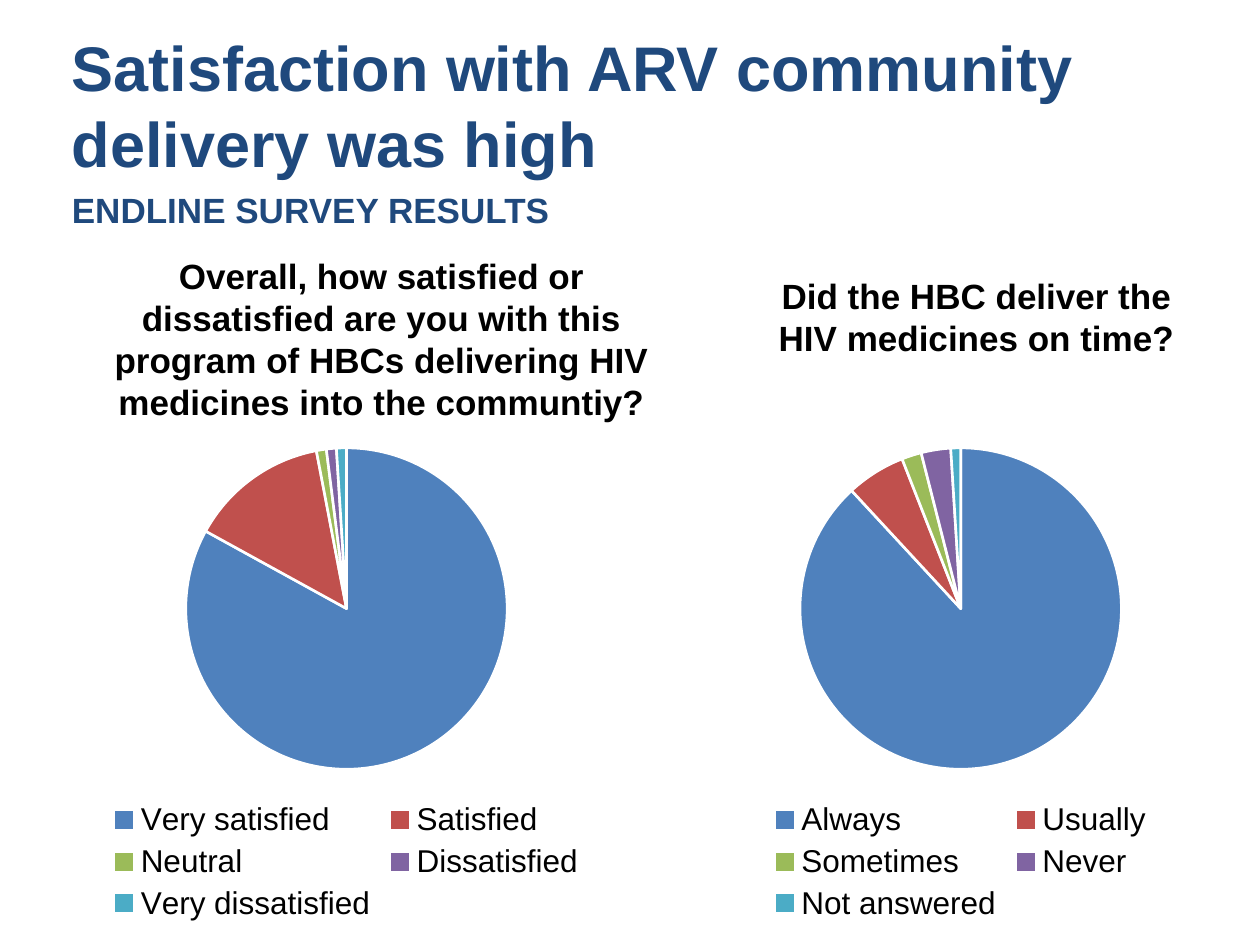
from pptx import Presentation
from pptx.chart.data import CategoryChartData
from pptx.dml.color import RGBColor
from pptx.enum.chart import XL_CHART_TYPE, XL_LEGEND_POSITION
from pptx.enum.text import PP_ALIGN
from pptx.util import Pt

HUES = {
    "navy": "1F497D", "black": "000000", "white": "FFFFFF",
    "blue": "4F81BD", "red": "C0504D", "green": "9BBB59",
    "plum": "8064A2", "teal": "4BACC6",
}
WEDGES = ("blue", "red", "green", "plum", "teal")
HEAD = {"name": "Arial", "size": Pt(36), "bold": True}
SUB = {**HEAD, "size": Pt(20)}
KEY = {"name": "Arial", "size": Pt(18), "bold": False}


def hue(name):
    """Return the named colour."""
    return RGBColor.from_string(HUES[name])


def style(font, looks, tint):
    """Apply format values and a colour to a font."""
    for key, value in looks.items():
        setattr(font, key, value)
    font.color.rgb = hue(tint)


def write(slide, box, lines, tint, align, gap=0):
    """Place a text box holding one paragraph per line."""
    frame = slide.shapes.add_textbox(*map(Pt, box)).text_frame
    frame.word_wrap = True
    for i, (text, looks) in enumerate(lines):
        para = frame.paragraphs[0] if i == 0 else frame.add_paragraph()
        para.alignment = align
        if i < len(lines) - 1:
            para.space_after = Pt(gap)
        run = para.add_run()
        run.text = text
        style(run.font, looks, tint)


def draw_pie(slide, box, shares):
    """Place a pie chart with its legend below."""
    data = CategoryChartData()
    data.categories = list(shares)
    data.add_series("Series 1", list(shares.values()))
    chart = slide.shapes.add_chart(
        XL_CHART_TYPE.PIE, *map(Pt, box), data).chart
    style(chart.font, {**KEY, "size": Pt(10)}, "black")
    chart.has_title = False
    chart.has_legend = True
    legend = chart.legend
    legend.position = XL_LEGEND_POSITION.BOTTOM
    legend.include_in_layout = False
    style(legend.font, KEY, "black")
    plot = chart.plots[0]
    plot.vary_by_categories = True
    for i, name in enumerate(WEDGES):
        look = plot.series[0].points[i].format
        look.fill.solid()
        look.fill.fore_color.rgb = hue(name)
        look.line.color.rgb = hue("white")
        look.line.width = Pt(1.5)


def ask(slide, box, chart, text, shares):
    """Place a survey question and the pie of its answers."""
    draw_pie(slide, chart, shares)
    write(slide, box, [(text, SUB)], "black", PP_ALIGN.CENTER)


def main():
    """Build the slide and save it."""
    deck = Presentation()
    deck.slide_width, deck.slide_height = Pt(720), Pt(540)
    slide = deck.slides.add_slide(deck.slide_layouts[6])
    top, tall = 246, 284
    ask(slide, (432, 153.5, 252, 55.5), (357, top, 384, tall),
        "Did the HBC deliver the HIV medicines on time?",
        {"Always": 89, "Usually": 6, "Sometimes": 2, "Never": 3,
         "Not answered": 1})
    ask(slide, (50, 142, 336, 104), (18, top, 360, tall),
        "Overall, how satisfied or dissatisfied are you with this program "
        "of HBCs delivering HIV medicines into the communtiy?",
        {"Very satisfied": 83, "Satisfied": 14, "Neutral": 1,
         "Dissatisfied": 1, "Very dissatisfied": 1})
    write(slide, (34, 13, 666, 124),
          [("Satisfaction with ARV community delivery was high", HEAD),
           ("ENDLINE SURVEY RESULTS", SUB)],
          "navy", PP_ALIGN.LEFT, 4.5)
    deck.save("out.pptx")


if __name__ == "__main__":
    main()
